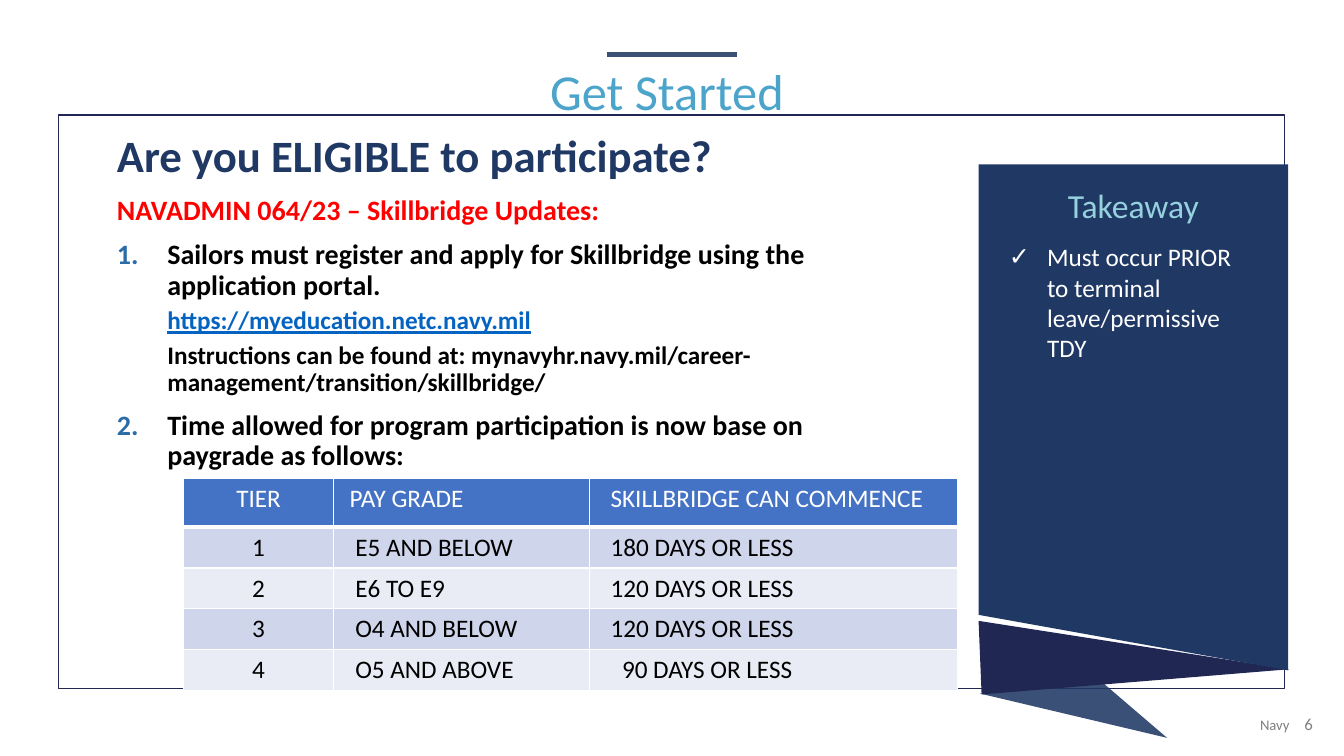
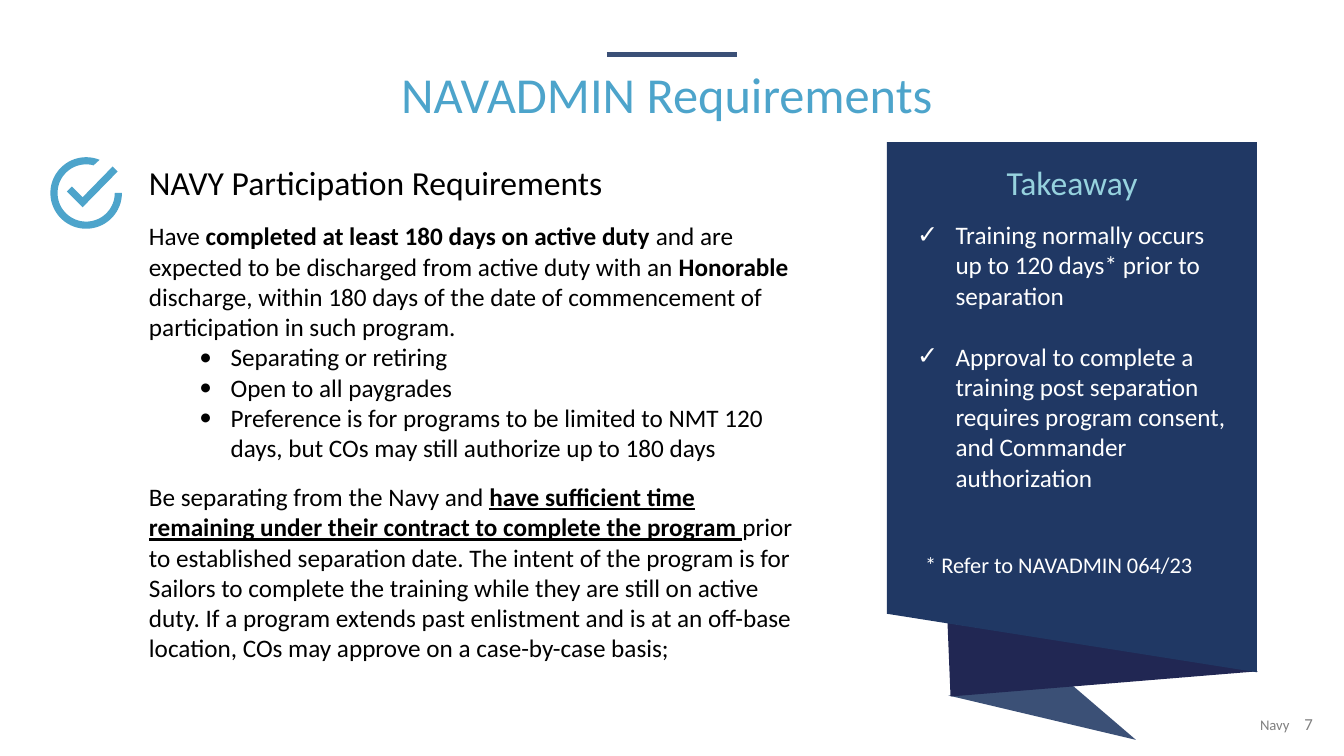
from math import cos, radians, sin

from lxml import etree
from pptx import Presentation
from pptx.dml.color import RGBColor
from pptx.enum.shapes import MSO_CONNECTOR, MSO_SHAPE
from pptx.enum.text import MSO_ANCHOR, PP_ALIGN
from pptx.oxml.ns import qn
from pptx.util import Emu, Pt

LEFT, CENTER, RIGHT = PP_ALIGN.LEFT, PP_ALIGN.CENTER, PP_ALIGN.RIGHT
TOP, MIDDLE = MSO_ANCHOR.TOP, MSO_ANCHOR.MIDDLE
RECTANGLE, STRAIGHT = MSO_SHAPE.RECTANGLE, MSO_CONNECTOR.STRAIGHT

# Grid of square cells; every length below is in cells
COLUMNS, ROWS, CELL = 160, 90, 76200
FONT = "Calibri"
WHITE, BLACK, GRAY, RED = "FFFFFF", "000000", "808080", "FF0000"
NAVY, INDIGO, SLATE = "203864", "212753", "3B5077"
SKY, AQUA, NUMBER_BLUE, LINK_BLUE = "4DA4CB", "96D2DE", "2B6CA7", "0563C1"
HEADER_BLUE, BANDS = "4472C4", ("CFD5EA", "E9EBF5")


def grid(cells):
    return Emu(round(cells * CELL))


def color(hex_string):
    return RGBColor.from_string(hex_string)


def apply(target, values):
    for name, value in values.items():
        setattr(target, name, value)


def add_element(parent, tag, **attributes):
    element = etree.SubElement(parent, qn(tag))
    for name, value in attributes.items():
        element.set(name, str(value))
    return element


# Text

def entry(*runs, bullet=None, indent=0, hang=0, **layout):
    """One paragraph: runs are (text, format) pairs."""
    return {"runs": runs, "bullet": bullet, "indent": indent,
            "hang": hang, "layout": layout}


def run_format(size, hex_string, **extra):
    return {"size": Pt(size), "color": hex_string, **extra}


def set_bullet(paragraph, bullet, indent, hang):
    properties = paragraph._p.get_or_add_pPr()
    properties.set("marL", str(grid(indent)))
    properties.set("indent", str(-grid(hang)))
    if isinstance(bullet, int):
        bullet_color = add_element(properties, "a:buClr")
        add_element(bullet_color, "a:srgbClr", val=NUMBER_BLUE)
        add_element(properties, "a:buFont", typeface=FONT)
        add_element(properties, "a:buAutoNum", type="arabicPeriod", startAt=bullet)
    elif bullet:
        add_element(properties, "a:buFont", typeface=FONT)
        add_element(properties, "a:buChar", char=bullet)
    else:
        add_element(properties, "a:buNone")


def write(frame, entries, margins=(1.2, 0.6), anchor=TOP):
    side, top = (grid(margin) for margin in margins)
    apply(frame, {"word_wrap": True, "vertical_anchor": anchor,
                  "margin_left": side, "margin_right": side,
                  "margin_top": top, "margin_bottom": top})
    for index, item in enumerate(entries):
        paragraph = frame.add_paragraph() if index else frame.paragraphs[0]
        set_bullet(paragraph, item["bullet"], item["indent"], item["hang"])
        apply(paragraph, {"alignment": LEFT, **item["layout"]})
        for text, values in item["runs"]:
            run = paragraph.add_run()
            run.text = text
            values = {"name": FONT, **values}
            run.font.color.rgb = color(values.pop("color"))
            apply(run.font, values)


def add_text(slide, box, entries, **options):
    shape = slide.shapes.add_textbox(*map(grid, box))
    write(shape.text_frame, entries, **options)


# Shapes

def add_outline(slide, contours, hex_string, alpha=None):
    first, *others = [[(grid(x), grid(y)) for x, y in points] for points in contours]
    builder = slide.shapes.build_freeform(*first[0])
    builder.add_line_segments(first[1:], close=True)
    for points in others:
        builder.move_to(*points[0])
        builder.add_line_segments(points[1:], close=True)
    shape = builder.convert_to_shape()
    shape.shadow.inherit = False
    shape.line.fill.background()
    shape.fill.solid()
    shape.fill.fore_color.rgb = color(hex_string)
    if alpha:
        solid = shape._element.spPr.find(qn("a:solidFill"))
        add_element(solid[0], "a:alpha", val=alpha * 1000)
    return shape


def add_frame(slide, box):
    shape = slide.shapes.add_shape(RECTANGLE, *map(grid, box))
    shape.shadow.inherit = False
    shape.fill.background()
    shape.line.color.rgb = color(INDIGO)
    shape.line.width = Pt(1)


def add_check_icon(slide, box):
    left, top, width, height = box

    def arc(ratio, angles):
        return [(left + width / 2 * (1 + ratio * cos(radians(angle))),
                 top + height / 2 * (1 + ratio * sin(radians(angle))))
                for angle in angles]

    ring = arc(1, range(0, 293, 4)) + arc(0.8, range(285, -1, -5))
    tick = [(left + x * width, top + y * height) for x, y in (
        (0.87, 0.13), (0.94, 0.2), (0.45, 0.7), (0.23, 0.48), (0.3, 0.41), (0.45, 0.56))]
    add_outline(slide, [tick, ring], SKY)


def add_takeaway(slide, box, slant, entries):
    """Navy ribbon whose folds hang from its lower right corner."""
    left, top, width, height = box
    right, bottom = left + width, top + height
    folds = (
        (((-36.72, 2.76), (-21.96, 1.56), (-14.4, 8.04)), NAVY, 88),
        (((-36.84, -5.88), (0.12, -0.12), (-36.48, 2.88)), INDIGO, None),
    )
    for offsets, hex_string, alpha in folds:
        points = [(right + x, bottom + y) for x, y in offsets]
        add_outline(slide, [points], hex_string, alpha)
    panel = add_outline(slide, [[(right, bottom), (left, bottom - slant),
                                 (left, top), (right, top)]], NAVY)
    heading = entry(("Takeaway", run_format(24, AQUA)),
                    alignment=CENTER, space_after=Pt(12))
    write(panel.text_frame, [heading, *entries], margins=(3.6, 2.4))


def check_entry(text, **layout):
    return entry((text, run_format(18, WHITE)), bullet="✓",
                 indent=4.56, hang=4.56, **layout)


# Table

def add_border(properties, side, points):
    line = add_element(properties, f"a:{side}", w=Pt(points))
    add_element(add_element(line, "a:solidFill"), "a:srgbClr", val=WHITE)


def add_tier_table(slide, left, top, widths, heights, records):
    shape = slide.shapes.add_table(len(records), len(widths), grid(left), grid(top),
                                   grid(sum(widths)), grid(sum(heights)))
    table = shape.table
    for column, width in zip(table.columns, widths):
        column.width = grid(width)
    for row_index, (row, height, record) in enumerate(zip(table.rows, heights, records)):
        row.height = grid(height)
        header = row_index == 0
        for column_index, (cell, text) in enumerate(zip(row.cells, record)):
            properties = cell._tc.get_or_add_tcPr()
            for side in ("lnL", "lnR", "lnT", "lnB"):
                thick = header and side == "lnB" or row_index == 1 and side == "lnT"
                add_border(properties, side, 3 if thick else 1)
            cell.fill.solid()
            cell.fill.fore_color.rgb = color(
                HEADER_BLUE if header else BANDS[(row_index - 1) % 2])
            write(cell.text_frame, [entry(
                (text, run_format(18, WHITE if header else BLACK)),
                alignment=LEFT if column_index else CENTER)])
            # Text is set in from the cell edge; two-digit days align right
            inset = (1.2, 1.9 if header else 2.56, 2.56)[column_index]
            if text.startswith("90 "):
                inset += 1.36
            apply(cell, {"margin_left": grid(inset), "margin_right": grid(1.2)})


# Slides

def add_base_slide(presentation, number, title, title_top):
    slide = presentation.slides.add_slide(presentation.slide_layouts[6])
    add_text(slide, (128.8, 84.6, 25.9, 4.8),
             [entry(("Navy", run_format(10.5, GRAY)), alignment=RIGHT)])
    add_text(slide, (154.1, 84.4, 5.3, 4.8),
             [entry((str(number), run_format(12, GRAY)))])
    rule = slide.shapes.add_connector(
        STRAIGHT, *map(grid, (72.24, 6.48, 87.72, 6.48)))
    rule.line.color.rgb = color(SLATE)
    rule.line.width = Pt(3)
    add_element(rule._element.spPr, "a:effectLst")
    add_text(slide, (44.4, title_top, 70, 6.72),
             [entry((title, run_format(36, SKY)), alignment=CENTER, line_spacing=0.9)],
             anchor=MIDDLE)
    return slide


def eligibility_entry(text, size, hex_string, before=10, underline=False, **options):
    values = run_format(size, hex_string, bold=True, underline=underline)
    return entry((text, values), line_spacing=0.9, space_before=Pt(before), **options)


def build_get_started(presentation):
    slide = add_base_slide(presentation, 6, "Get Started", 7.8)
    add_frame(slide, (6.96, 13.68, 146, 68.3))
    numbered = {"indent": 6, "hang": 6}
    add_text(slide, (10.32, 12.36, 99, 35.5), [
        eligibility_entry("Are you ELIGIBLE to participate?", 32, NAVY, before=0),
        eligibility_entry("NAVADMIN 064/23 – Skillbridge Updates:", 20, RED),
        eligibility_entry("Sailors must register and apply for Skillbridge using the "
                          "application portal.", 20, BLACK, bullet=1, **numbered),
        eligibility_entry("https://myeducation.netc.navy.mil", 18, LINK_BLUE,
                          before=5, underline=True, indent=6),
        eligibility_entry("Instructions can be found at: mynavyhr.navy.mil/career-"
                          "management/transition/skillbridge/", 18, BLACK,
                          before=5, indent=6),
        eligibility_entry("Time allowed for program participation is now base on "
                          "paygrade as follows:", 20, BLACK, bullet=2, **numbered),
    ], margins=(3.6, 3.6))
    add_tier_table(slide, 21.84, 57, (17.9, 30.4, 43.9), (5.76, *[4.86] * 4), (
        ("TIER", "PAY GRADE", "SKILLBRIDGE CAN COMMENCE"),
        ("1", "E5 AND BELOW", "180 DAYS OR LESS"),
        ("2", "E6 TO E9", "120 DAYS OR LESS"),
        ("3", "O4 AND BELOW", "120 DAYS OR LESS"),
        ("4", "O5 AND ABOVE", "90 DAYS OR LESS"),
    ))
    add_takeaway(slide, (116.5, 19.56, 36.84, 60.24), 6.6, [
        check_entry("Must occur PRIOR to terminal leave/permissive TDY")])


def build_requirements(presentation):
    slide = add_base_slide(presentation, 7, "NAVADMIN Requirements", 8.16)
    add_text(slide, (16.56, 18.72, 79.9, 6),
             [entry(("NAVY Participation Requirements", run_format(24, BLACK)))])
    plain = run_format(18, BLACK)
    bold = {**plain, "bold": True}
    points = ("Separating or retiring", "Open to all paygrades",
              "Preference is for programs to be limited to NMT 120 days, "
              "but COs may still authorize up to 180 days")
    add_text(slide, (16.56, 25.68, 79.9, 55.7), [
        entry(("Have ", plain), ("completed at least 180 days on active duty ", bold),
              ("and are expected to be discharged from active duty with an ", plain),
              ("Honorable ", bold),
              ("discharge, within 180 days of the date of commencement of "
               "participation in such program.", plain)),
        *[entry((point, plain), bullet="•", indent=9.72, hang=3.72) for point in points],
        entry(("Be separating from the Navy and ", plain),
              ("have sufficient time remaining under their contract to complete "
               "the program ", {**bold, "underline": True}),
              ("prior to established separation date. The intent of the program is for "
               "Sailors to complete the training while they are still on active duty. "
               "If a program extends past enlistment and is at an off-base location, "
               "COs may approve on a case-by-case basis;", plain),
              space_before=Pt(13.4)),
    ])
    add_takeaway(slide, (105.6, 16.92, 44.04, 63.12), 6.96, [
        check_entry("Training normally occurs up to 120 days* prior to separation"),
        check_entry("Approval to complete a training post separation requires program "
                    "consent, and Commander authorization", space_before=Pt(22))])
    add_check_icon(slide, (6, 18.72, 8.52, 8.52))
    add_text(slide, (108.96, 65.04, 38.5, 4.4),
             [entry(("* Refer to NAVADMIN 064/23", run_format(16, WHITE)))])


def main():
    presentation = Presentation()
    apply(presentation, {"slide_width": grid(COLUMNS), "slide_height": grid(ROWS)})
    build_get_started(presentation)
    build_requirements(presentation)
    presentation.save("out.pptx")


if __name__ == "__main__":
    main()
